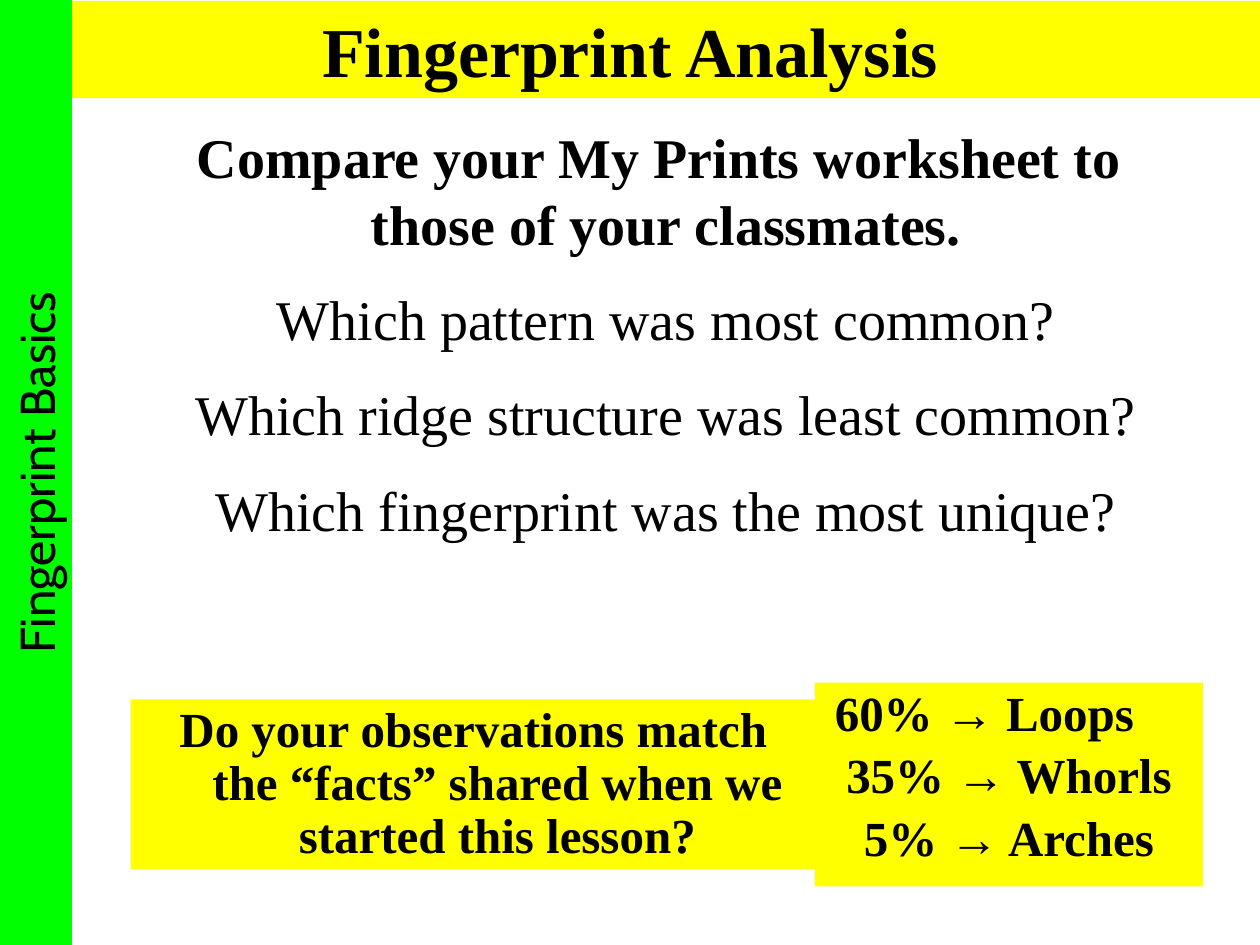
from dataclasses import dataclass

from pptx import Presentation
from pptx import util as u
from pptx.dml.color import RGBColor
from pptx.enum import shapes, text


@dataclass(frozen=True)
class Theme:
    yellow: RGBColor = RGBColor(0xFF, 0xFF, 0x00)
    green: RGBColor = RGBColor(0x00, 0xFF, 0x00)
    ink: RGBColor = RGBColor(0x00, 0x00, 0x00)
    serif: str = "Times New Roman"
    sans: str = "Cabin"
    title: int = 40
    body: int = 32
    small: int = 28


THEME = Theme()
HANGING = (0.97, -0.97)


def cm(*lengths):
    return [u.Cm(n) for n in lengths]


def add_panel(slide, box, fill):
    sp = slide.shapes.add_shape(shapes.MSO_SHAPE.RECTANGLE, *cm(*box))
    sp.shadow.inherit = False
    sp.fill.solid()
    sp.fill.fore_color.rgb = fill
    sp.line.fill.background()
    sp.text_frame.vertical_anchor = text.MSO_ANCHOR.TOP
    return sp


def write(sp, lines, size, font=THEME.serif, bold=True, before=0, spacing=None):
    """Fill a shape with centred paragraphs and return them."""
    tf = sp.text_frame
    tf.word_wrap = True
    for i, line in enumerate(lines):
        p = tf.add_paragraph() if i else tf.paragraphs[0]
        p.text = line
        p.alignment = text.PP_ALIGN.CENTER
        p.space_before = u.Pt(before if i else 0)
        if spacing:
            p.line_spacing = spacing
        p.font.name = font
        p.font.size = u.Pt(size)
        p.font.bold = bold
        p.font.color.rgb = THEME.ink
    return tf.paragraphs


def indent(p, left, first):
    pPr = p._p.get_or_add_pPr()
    pPr.set("marL", str(u.Cm(left)))
    pPr.set("indent", str(u.Cm(first)))


def add_title(slide):
    sp = add_panel(slide, (0, 0.02, 25.4, 1.96), THEME.yellow)
    write(sp, ["Fingerprint Analysis"], THEME.title)


def add_questions(slide):
    sp = slide.shapes.add_textbox(*cm(2, 2.34, 22.86, 9.14))
    paragraphs = write(sp, [
        "Compare your My Prints worksheet to \vthose of your classmates.",
        "Which pattern was most common?",
        "Which ridge structure was least common?",
        "Which fingerprint was the most unique?",
    ], THEME.body, bold=False, before=16)
    paragraphs[0].font.bold = True


def add_side_label(slide):
    sp = add_panel(slide, (-8.8, 8.8, 19.05, 1.45), THEME.green)
    sp.rotation = 270
    write(sp, ["Fingerprint Basics"], THEME.small, THEME.sans, bold=False)


def add_fact_panel(slide, box, lines):
    sp = add_panel(slide, box, THEME.yellow)
    paragraphs = write(sp, lines, THEME.small, before=5.6, spacing=0.9)
    for p in paragraphs:
        indent(p, *HANGING)
    return paragraphs


def main():
    prs = Presentation()
    prs.slide_width, prs.slide_height = cm(25.4, 19.05)
    s = prs.slides.add_slide(prs.slide_layouts[6])

    add_title(s)
    add_questions(s)
    add_side_label(s)
    add_fact_panel(s, (2.64, 14.1, 13.8, 3.43), [
        "Do your observations match the “facts” shared when we "
        "started this lesson?",
    ])
    shares = add_fact_panel(s, (16.43, 13.76, 7.82, 4.11), [
        "60% → Loops", "35% → Whorls", "5% → Arches",
    ])
    shares[0].alignment = text.PP_ALIGN.LEFT
    indent(shares[0], 0.15, 0)

    prs.save("out.pptx")


if __name__ == "__main__":
    main()
